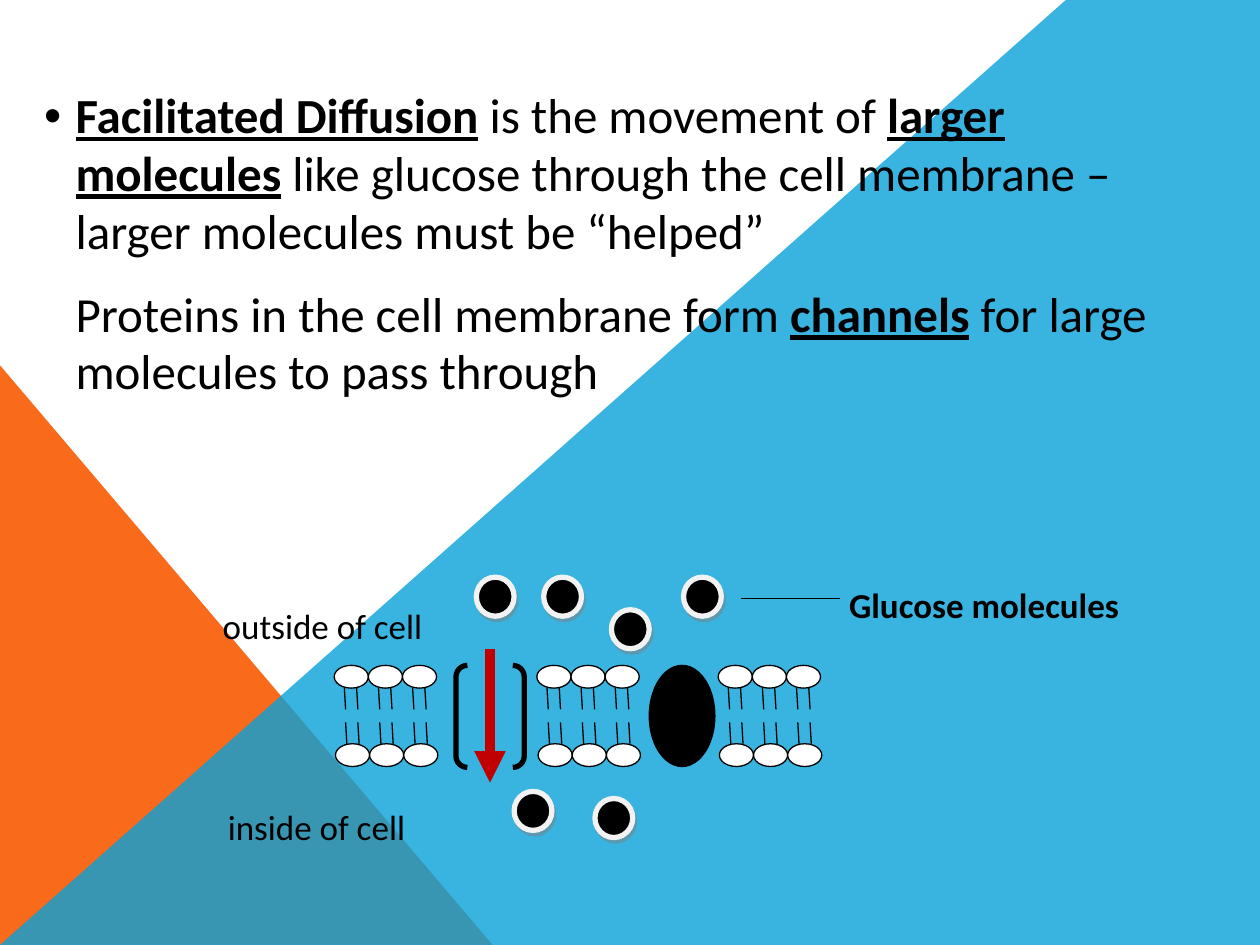
from lxml.etree import SubElement
from pptx import Presentation
from pptx.dml.color import RGBColor
from pptx.enum.shapes import MSO_CONNECTOR, MSO_SHAPE
from pptx.enum.text import MSO_ANCHOR, MSO_AUTO_SIZE, PP_ALIGN
from pptx.oxml.ns import qn
from pptx.util import Pt

COLORS = {
    "black": "000000", "white": "FFFFFF", "orange": "F96A1B", "blue": "08A1D9",
    "red": "C00000", "rim": "F2F2F2", "shadow": "7F7F7F",
}
FONT = "Calibri"


def color(name):
    return RGBColor.from_string(COLORS[name])


def paint(shape, fill=None, line=None, width=0.75):
    shape.shadow.inherit = False
    if fill:
        shape.fill.solid()
        shape.fill.fore_color.rgb = color(fill)
    else:
        shape.fill.background()
    if line:
        shape.line.color.rgb = color(line)
        shape.line.width = Pt(width)
    else:
        shape.line.fill.background()


def add_preset(slide, kind, box, fill=None, line="black", width=0.75):
    shape = slide.shapes.add_shape(kind, *(Pt(value) for value in box))
    paint(shape, fill, line, width)
    return shape


def add_line(slide, start, end, line="black", width=0.75):
    connector = slide.shapes.add_connector(
        MSO_CONNECTOR.STRAIGHT, *(Pt(value) for value in (*start, *end)))
    connector.line.color.rgb = color(line)
    connector.line.width = Pt(width)
    SubElement(connector.element.spPr, qn("a:effectLst"))
    return connector


def add_backdrop(slide, box):
    left, top, width, height = box
    bottom = top + height
    add_preset(slide, MSO_SHAPE.RIGHT_TRIANGLE,
               (left, bottom - 331.2, 281.5, 331.2), "orange", None)
    # Translucent blue area right of the diagonal
    builder = slide.shapes.build_freeform(Pt(left), Pt(bottom))
    corners = [(left + 609.1, top), (left + width, top), (left + width, bottom)]
    builder.add_line_segments([(Pt(x), Pt(y)) for x, y in corners], close=True)
    area = builder.convert_to_shape()
    paint(area, "blue")
    fill_color = area.element.spPr.find(qn("a:solidFill"))[0]
    SubElement(fill_color, qn("a:alpha"), val="80000")


def fill_body(slide, box):
    body = slide.placeholders[1]
    body.left, body.top, body.width, body.height = (Pt(value) for value in box)
    body.element.getparent().append(body.element)  # in front of the backdrop
    frame = body.text_frame
    frame.auto_size = MSO_AUTO_SIZE.NONE
    frame.vertical_anchor = MSO_ANCHOR.TOP
    frame.margin_top = Pt(7)
    # Runs alternate between key terms (True) and plain text
    texts = [
        [("Facilitated Diffusion", True), (" is the movement of ", False),
         ("larger molecules", True),
         (" like glucose through the cell membrane – "
          "larger molecules must be “helped”", False)],
        [("Proteins in the cell membrane form ", False), ("channels", True),
         (" for large molecules to pass through", False)],
    ]
    for index, runs in enumerate(texts):
        paragraph = frame.add_paragraph() if index else frame.paragraphs[0]
        paragraph.line_spacing = 0.98
        paragraph.space_before = Pt(0)
        paragraph.space_after = Pt(14.5)
        paragraph.font.name = FONT
        paragraph.font.size = Pt(28)
        paragraph.font.color.rgb = color("black")
        for text, is_term in runs:
            run = paragraph.add_run()
            run.text = text
            if is_term:
                run.font.bold = run.font.underline = True
        properties = paragraph._p.get_or_add_pPr()
        properties.set("marL", str(Pt(18)))
        properties.set("indent", str(0 if index else Pt(-18)))
        if index:
            SubElement(properties, qn("a:buNone"))
            properties.insert(3, properties[-1])


def add_label(slide, text, box, bold=False):
    label = slide.shapes.add_textbox(*(Pt(value) for value in box))
    label.text_frame.word_wrap = True
    paragraph = label.text_frame.paragraphs[0]
    paragraph.text = text
    paragraph.alignment = PP_ALIGN.LEFT
    paragraph.font.name = FONT
    paragraph.font.size = Pt(20)
    paragraph.font.bold = bold
    paragraph.font.color.rgb = color("black")


def add_bilayer(slide, left, top, height):
    """Three pairs of lipids whose tails meet in the middle."""
    head_width, head_height, tail_length = 19.5, 13, 12.2
    bottom = top + height
    for column in range(3):
        x = left + column * head_width
        for shift, head_top, neck, direction in (
                (0, top, top + head_height, 1),
                (0.7, bottom - head_height, bottom - head_height, -1)):
            add_preset(slide, MSO_SHAPE.OVAL,
                       (x + shift, head_top, head_width, head_height), "white")
            for tail_x in (6.5, 13.5):
                add_line(slide, (x + tail_x - 0.7 * direction, neck),
                         (x + tail_x, neck + tail_length * direction))


def add_glucose(slide, left, top):
    molecule = add_preset(slide, MSO_SHAPE.OVAL, (left, top, 21.6, 22.3),
                          "black", "rim", 3)
    effects = molecule.element.spPr.find(qn("a:effectLst"))
    shadow = SubElement(effects, qn("a:outerShdw"), dist=str(Pt(2.2)),
                        dir=str(63 * 60000), algn="ctr", rotWithShape="0")
    shade = SubElement(shadow, qn("a:srgbClr"), val=COLORS["shadow"])
    SubElement(shade, qn("a:alpha"), val="50000")


def add_membrane(slide, box):
    left, top, width, height = box
    for offset in (0, 115.8, 219.4):
        add_bilayer(slide, left + offset, top, height)
    # Open channel and closed protein
    channel = add_preset(slide, MSO_SHAPE.DOUBLE_BRACKET,
                         (left + 69.6, top, 39, height + 0.5), width=3)
    channel.adjustments[0] = 0.167
    add_preset(slide, MSO_SHAPE.OVAL, (left + 180, top, 37.5, height), "black")
    # Passage through the channel
    arrow = add_line(slide, (left + 89, top - 9.4), (left + 89, top + 67),
                     "red", 6)
    SubElement(arrow.line._get_or_add_ln(), qn("a:tailEnd"), type="triangle")
    # Glucose molecules outside and inside the cell
    for x, y in ((81.2, -50.4), (119.7, -50.4), (158.4, -31.8),
                 (199.6, -50.4), (149, 76.1), (102.8, 72)):
        add_glucose(slide, left + x, top + y)
    add_line(slide, (left + 232.4, top - 38.2), (left + 289, top - 38.2))
    add_label(slide, "outside of cell", (left - 70.8, top - 38.2, 156, 71))
    add_label(slide, "inside of cell", (left - 67.9, top + 76.3, 185, 66))
    add_label(slide, "Glucose molecules",
              (left + 287.1, top - 50.4, 173, 40), True)


def main():
    presentation = Presentation()
    presentation.slide_width, presentation.slide_height = Pt(720), Pt(540)
    slide = presentation.slides.add_slide(presentation.slide_layouts[1])
    title = slide.shapes.title.element
    title.getparent().remove(title)
    slide.background.fill.solid()
    slide.background.fill.fore_color.rgb = color("white")

    add_backdrop(slide, (0, 0, 720, 540))
    fill_body(slide, (18, 43.2, 684, 227.5))
    add_membrane(slide, (191, 380.2, 278, 57.8))
    presentation.save("out.pptx")


if __name__ == "__main__":
    main()
